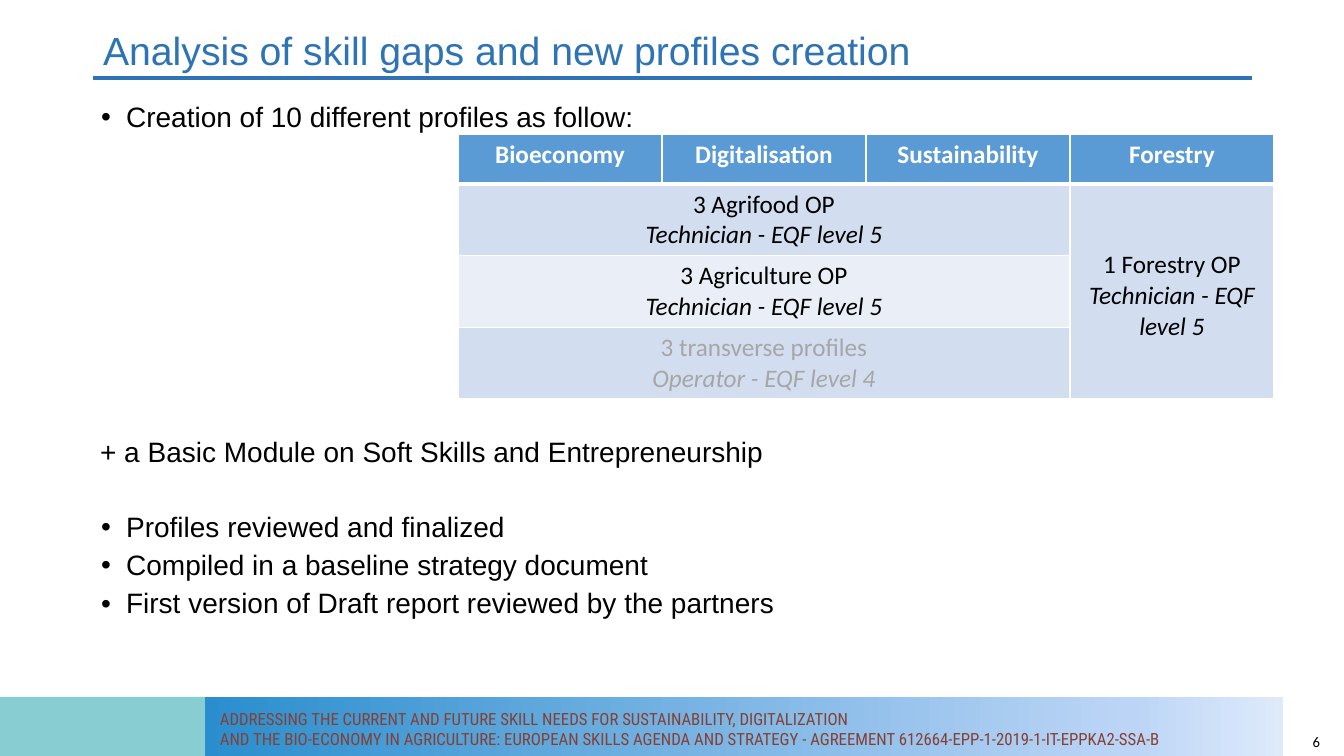
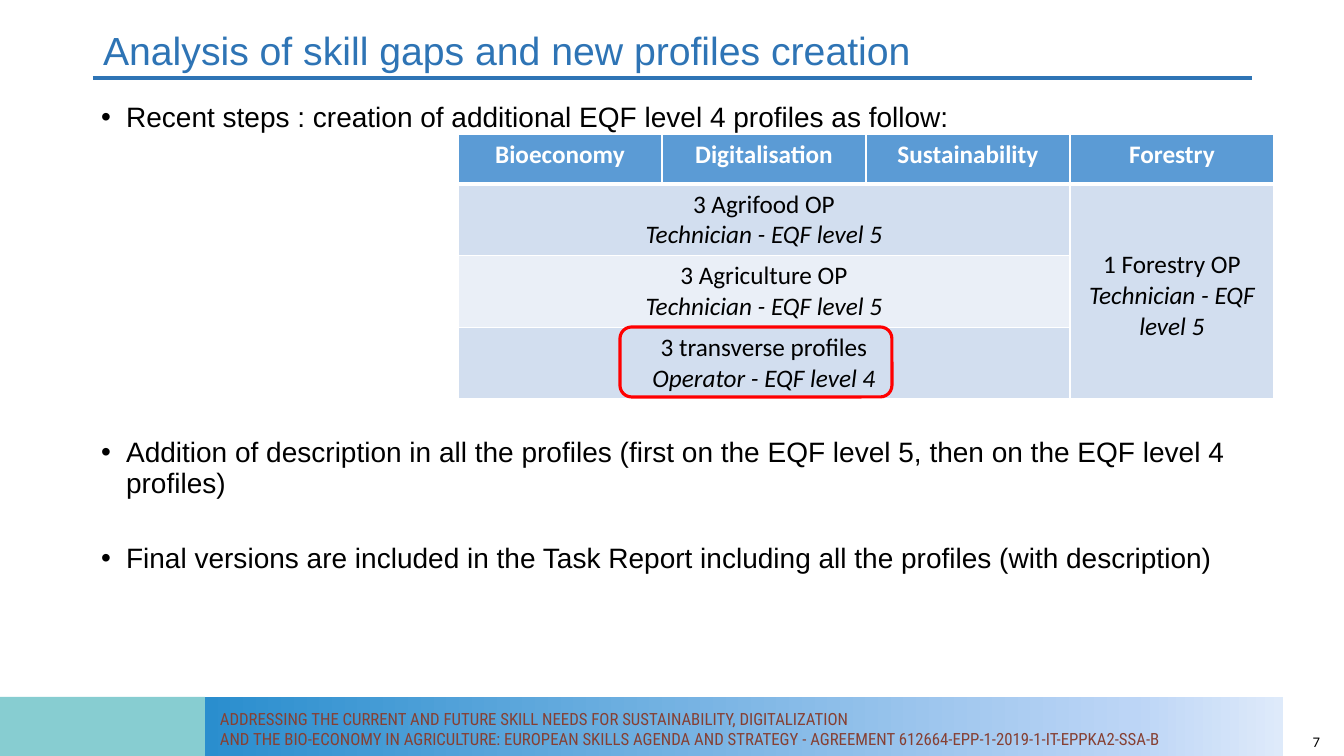
from copy import deepcopy

from lxml.etree import SubElement
from pptx import Presentation
from pptx.dml.color import RGBColor
from pptx.enum.shapes import MSO_CONNECTOR, MSO_SHAPE
from pptx.enum.text import MSO_ANCHOR, MSO_AUTO_SIZE, PP_ALIGN
from pptx.oxml.ns import qn
from pptx.util import Emu, Pt

EMU_PER_PX = 914400 / 100.8
BLUE, BLACK, WHITE, GREY, RED = "2E74B5", "000000", "FFFFFF", "A6A6A6", "FF0000"
TEAL, BROWN = "87CDD1", "864033"
HEADER_FILL, DARK_BAND, LIGHT_BAND = "5B9BD5", "D2DEEF", "EAEFF7"
BAND_GRADIENT = [(0, "2A8ECE"), (0.86, "BCD5F6"), (1, "DEEAFA")]

TITLE = "Analysis of skill gaps and new profiles creation"
FOOTER = (
    "ADDRESSING THE CURRENT AND FUTURE SKILL NEEDS FOR SUSTAINABILITY, DIGITALIZATION\n"
    "AND THE BIO-ECONOMY IN AGRICULTURE: EUROPEAN SKILLS AGENDA AND STRATEGY"
    " - AGREEMENT 612664-EPP-1-2019-1-IT-EPPKA2-SSA-B"
)
HEADERS = ["Bioeconomy", "Digitalisation", "Sustainability", "Forestry"]
PROFILES = [
    ("3 Agrifood OP\nTechnician - EQF level 5", DARK_BAND),
    ("3 Agriculture OP\nTechnician - EQF level 5", LIGHT_BAND),
    ("3 transverse profiles\nOperator - EQF level 4", DARK_BAND),
]
FORESTRY = "1 Forestry OP\nTechnician - EQF level 5"

# Each body line: text, has a bullet, points before it
PAGES = [
    {
        "number": 6,
        "transverse_colour": GREY,
        "highlight": False,
        "body": [
            ("Creation of 10 different profiles as follow:", True, 0),
            ("+ a Basic Module on Soft Skills and Entrepreneurship", False, 217),
            ("Profiles reviewed and finalized", True, 31.5),
            ("Compiled in a baseline strategy document", True, 5),
            ("First version of Draft report reviewed by the partners", True, 5),
        ],
    },
    {
        "number": 7,
        "transverse_colour": BLACK,
        "highlight": True,
        "body": [
            ("Recent steps : creation of additional EQF level 4 profiles as follow:", True, 0),
            ("Addition of description in all the profiles (first on the EQF level 5, "
             "then on the EQF level 4 profiles)", True, 217),
            ("Final versions are included in the Task Report including all the profiles "
             "(with description)", True, 31.5),
        ],
    },
]


def px(*lengths):
    """Turn px lengths into a list of EMU."""
    return [Emu(round(length * EMU_PER_PX)) for length in lengths]


def write(frame, text, size, font, colour, align=PP_ALIGN.LEFT):
    frame.word_wrap = True
    frame.auto_size = MSO_AUTO_SIZE.NONE
    frame.text = text
    for paragraph in frame.paragraphs:
        paragraph.alignment = align
        paragraph.font.size = Pt(size)
        paragraph.font.name = font
        paragraph.font.color.rgb = RGBColor.from_string(colour)


deck = Presentation()
deck.slide_width, deck.slide_height = px(1344, 756)

for content in PAGES:
    page = deck.slides.add_slide(deck.slide_layouts[1])
    title, body = page.placeholders

    # Title and rule
    title.left, title.top, title.width, title.height = px(93, 27, 1159, 59)
    write(title.text_frame, TITLE, 28, "Arial", BLUE)
    title.text_frame.vertical_anchor = MSO_ANCHOR.TOP
    title.text_frame.paragraphs[0].line_spacing = 0.9
    rule = page.shapes.add_connector(MSO_CONNECTOR.STRAIGHT, *px(93, 78, 1252, 78))
    rule.line.color.rgb = RGBColor.from_string(BLUE)
    rule.line.width = Pt(2.25)
    SubElement(rule._element.spPr, qn("a:effectLst"))

    # Footer
    bands = []
    for left, width in [(0, 205), (205, 1078)]:
        band = page.shapes.add_shape(MSO_SHAPE.RECTANGLE, *px(left, 697, width, 59))
        band.shadow.inherit = False
        band.line.fill.background()
        bands.append(band)
    bands[0].fill.solid()
    bands[0].fill.fore_color.rgb = RGBColor.from_string(TEAL)
    gradient = bands[1].fill
    gradient.gradient()
    gradient.gradient_angle = 0
    stops = bands[1]._element.spPr.find(".//" + qn("a:gsLst"))
    stops.append(deepcopy(stops[-1]))
    for stop, (position, colour) in zip(gradient.gradient_stops, BAND_GRADIENT):
        stop.position = position
        stop.color.rgb = RGBColor.from_string(colour)
    footer = page.shapes.add_textbox(*px(210, 704, 1074, 50))
    write(footer.text_frame, FOOTER, 12, "Roboto Condensed", BROWN)
    number = page.shapes.add_textbox(*px(1028, 729, 302, 25))
    write(number.text_frame, str(content["number"]), 10.5, "Calibri", BLACK, PP_ALIGN.RIGHT)
    number.text_frame.vertical_anchor = MSO_ANCHOR.MIDDLE

    # Body list, with room for the table after its first line
    body.left, body.top, body.width, body.height = px(40, 97, 1250, 600)
    lines = content["body"]
    body.text_frame.text = "\n".join(text for text, _, _ in lines)
    for paragraph, (_, bulleted, before) in zip(body.text_frame.paragraphs, lines):
        paragraph.line_spacing = 0.93
        paragraph.space_before = Pt(before)
        properties = paragraph._p.get_or_add_pPr()
        margin, indent = px(76, -25) if bulleted else px(50, 0)
        properties.set("marL", str(margin))
        properties.set("indent", str(indent))
        if bulleted:
            SubElement(properties, qn("a:buChar"), char="•")
        else:
            SubElement(properties, qn("a:buNone"))
        paragraph.alignment = PP_ALIGN.LEFT
        paragraph.font.size = Pt(20)
        paragraph.font.name = "Arial"
        paragraph.font.color.rgb = RGBColor.from_string(BLACK)
    body.text_frame.auto_size = MSO_AUTO_SIZE.NONE

    # Profile table
    table = page.shapes.add_table(4, 4, *px(458, 134, 816, 263)).table
    table.first_row = table.horz_banding = False
    for column in table.columns:
        column.width = px(204)[0]
    for row, height in zip(table.rows, px(50, 71, 71, 71)):
        row.height = height
    fills = [HEADER_FILL] + [fill for _, fill in PROFILES]
    for row in range(4):
        for column in range(4):
            cell = table.cell(row, column)
            for side in "LRTB":
                thick = (row, side) in [(0, "B"), (1, "T")]
                border = SubElement(cell._tc.get_or_add_tcPr(), qn("a:ln" + side),
                                    w=str(Pt(3 if thick else 1)))
                SubElement(SubElement(border, qn("a:solidFill")), qn("a:srgbClr"), val=WHITE)
            cell.fill.solid()
            fill = DARK_BAND if row and column == 3 else fills[row]
            cell.fill.fore_color.rgb = RGBColor.from_string(fill)

    for column, header in enumerate(HEADERS):
        frame = table.cell(0, column).text_frame
        write(frame, header, 18, "Calibri", WHITE, PP_ALIGN.CENTER)
        frame.paragraphs[0].font.bold = True

    entries = [(row, 0, row, 2, text) for row, (text, _) in enumerate(PROFILES, 1)]
    entries.append((1, 3, 3, 3, FORESTRY))
    for top, left, bottom, right, text in entries:
        cell = table.cell(top, left)
        cell.merge(table.cell(bottom, right))
        colour = content["transverse_colour"] if top == 3 else BLACK
        write(cell.text_frame, text, 18, "Calibri", colour, PP_ALIGN.CENTER)
        cell.text_frame.paragraphs[1].font.italic = True
    table.cell(1, 3).margin_top = px(66)[0]

    if content["highlight"]:
        frame = page.shapes.add_shape(MSO_SHAPE.ROUNDED_RECTANGLE, *px(620, 327, 272, 70))
        frame.shadow.inherit = False
        frame.fill.background()
        frame.line.color.rgb = RGBColor.from_string(RED)
        frame.line.width = Pt(2.25)

deck.save("out.pptx")
